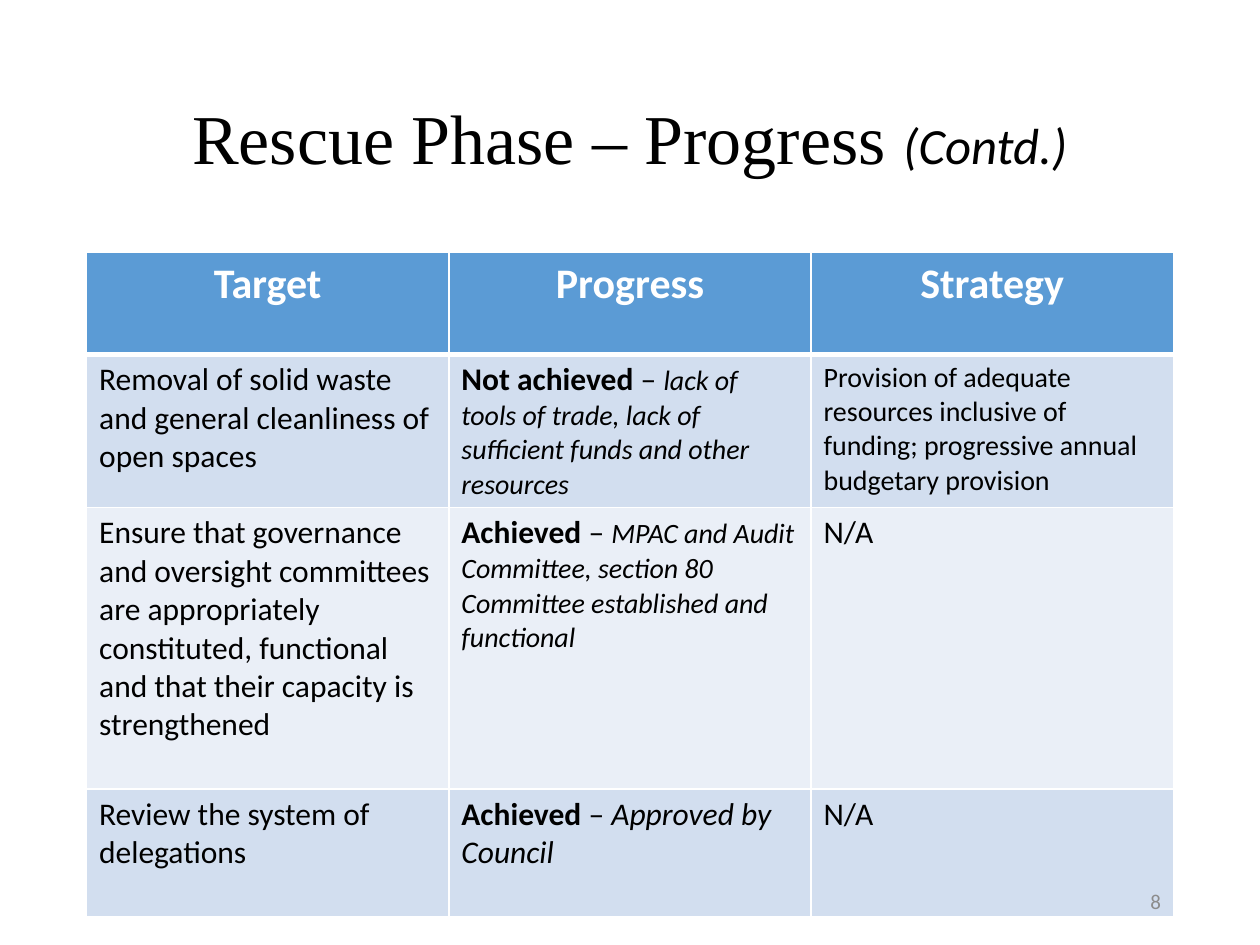
"""Build the rescue phase progress slide with its target table."""
import pptx
import pptx.dml.color
import pptx.enum.text
import pptx.oxml
import pptx.oxml.ns
import pptx.util

Pt = pptx.util.Pt
RGBColor = pptx.dml.color.RGBColor
ALIGN = pptx.enum.text.PP_ALIGN
MIDDLE = pptx.enum.text.MSO_ANCHOR.MIDDLE

BLACK = RGBColor(0, 0, 0)
WHITE = RGBColor(255, 255, 255)
GREY = RGBColor(0x8C, 0x8C, 0x8C)
HEADER_BLUE = RGBColor(0x5B, 0x9B, 0xD5)
BANDS = [RGBColor(0xD2, 0xDE, 0xEF), RGBColor(0xEA, 0xEF, 0xF7)]

TITLE = [("Rescue Phase – Progress ", 40, "", "Times New Roman"),
         ("(Contd.)", 29, "i", "Calibri")]
HEADERS = ["Target", "Progress", "Strategy"]
ROWS = [
    [[("Removal of solid waste and general cleanliness of open spaces", 18, "")],
     [("Not achieved ", 18, "b"), ("– ", 18, ""),
      ("lack of tools of trade, lack of sufficient funds and other resources", 16, "i")],
     [("Provision of adequate resources inclusive of funding; "
       "progressive annual budgetary provision", 16, "")]],
    [[("Ensure that governance and oversight committees are appropriately "
       "constituted, functional and that their capacity is strengthened", 18, "")],
     [("Achieved ", 18, "b"), ("– ", 18, ""),
      ("MPAC and Audit Committee, section 80 Committee established and functional", 16, "i")],
     [("N/A", 18, "")]],
    [[("Review the system of delegations", 18, "")],
     [("Achieved ", 18, "b"), ("– ", 18, ""), ("Approved by Council", 18, "i")],
     [("N/A", 18, "")]],
]
LEFT, WIDTH = 49.5, 621
TABLE_TOP = 144
ROW_HEIGHTS = [58.5, 87.5, 161, 73]


def write(frame, runs, color, align=ALIGN.LEFT):
    paragraph = frame.paragraphs[0]
    paragraph.alignment = align
    paragraph.font.color.rgb = color
    for text, size, style, *name in runs:
        run = paragraph.add_run()
        run.text = text
        run.font.name = name[0] if name else "Calibri"
        run.font.size = Pt(size)
        run.font.bold = "b" in style
        run.font.italic = "i" in style
        run.font.color.rgb = color
    return paragraph


def add_text(slide, box, runs, color, align):
    frame = slide.shapes.add_textbox(*map(Pt, box)).text_frame
    frame.word_wrap = True
    frame.vertical_anchor = MIDDLE
    return write(frame, runs, color, align)


def style_cell(cell, fill, bottom_width):
    properties = cell._tc.get_or_add_tcPr()
    for side in "LRTB":
        width = Pt(bottom_width if side == "B" else 1)
        properties.append(pptx.oxml.parse_xml(
            f'<a:ln{side} {pptx.oxml.ns.nsdecls("a")} w="{width}">'
            f'<a:solidFill><a:srgbClr val="{WHITE}"/></a:solidFill></a:ln{side}>'))
    cell.fill.solid()
    cell.fill.fore_color.rgb = fill


def add_progress_table(slide):
    shape = slide.shapes.add_table(
        len(ROW_HEIGHTS), len(HEADERS),
        Pt(LEFT), Pt(TABLE_TOP), Pt(WIDTH), Pt(sum(ROW_HEIGHTS)))
    table = shape.table
    for column in table.columns:
        column.width = Pt(WIDTH / len(HEADERS))
    for row, height in zip(table.rows, ROW_HEIGHTS):
        row.height = Pt(height)
    for index, header in enumerate(HEADERS):
        cell = table.cell(0, index)
        write(cell.text_frame, [(header, 24, "b")], WHITE, ALIGN.CENTER)
        style_cell(cell, HEADER_BLUE, 3)
    for row_index, row in enumerate(ROWS):
        for index, runs in enumerate(row):
            cell = table.cell(row_index + 1, index)
            write(cell.text_frame, runs, BLACK)
            style_cell(cell, BANDS[row_index % 2], 1)


def main():
    presentation = pptx.Presentation()
    presentation.slide_width, presentation.slide_height = Pt(720), Pt(540)
    slide = presentation.slides.add_slide(presentation.slide_layouts[6])
    title = add_text(slide, (LEFT, 28.75, WIDTH, 104.5), TITLE, BLACK, ALIGN.CENTER)
    title.line_spacing = 0.9
    add_progress_table(slide)
    add_text(slide, (508.5, 500.5, 162, 28.75), [("8", 12, "")], GREY, ALIGN.RIGHT)
    presentation.save("out.pptx")


if __name__ == "__main__":
    main()
